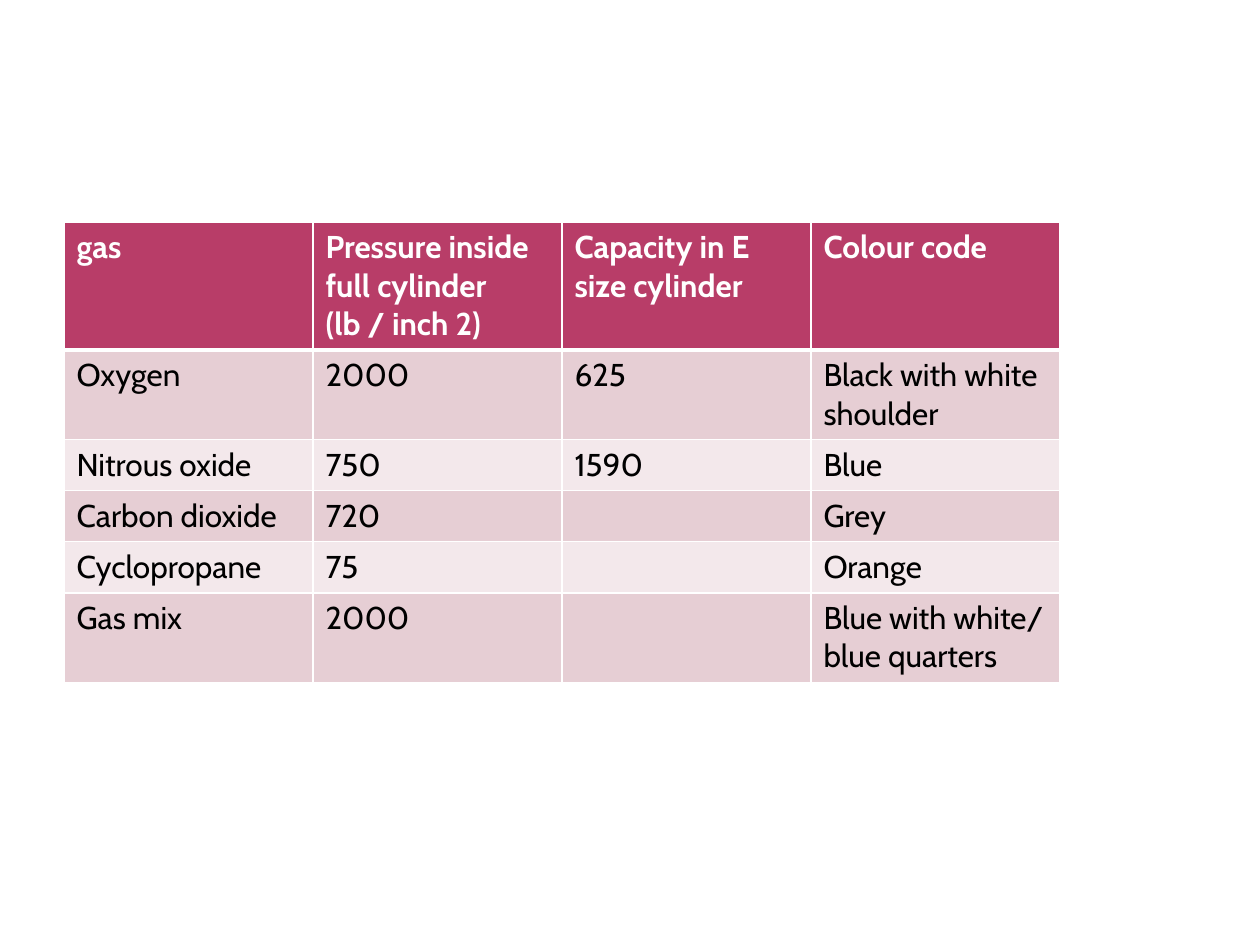
from lxml import etree
from pptx import Presentation
from pptx.dml.color import RGBColor as RGB
from pptx.oxml import parse_xml
from pptx.oxml.ns import nsdecls
from pptx.util import Pt

PX = 914400 // 126
WHITE = RGB(0xFF, 0xFF, 0xFF)
BLACK = RGB(0x00, 0x00, 0x00)
HEADER = RGB(0xB8, 0x3D, 0x68)
BANDS = [RGB(0xF3, 0xE8, 0xEB), RGB(0xE6, 0xCE, 0xD4)]

ROWS = [
    ["gas", "Pressure inside full cylinder (lb / inch 2)",
     "Capacity in E size cylinder", "Colour code"],
    ["Oxygen", "2000", "625", "Black with white shoulder"],
    ["Nitrous oxide", "750", "1590", "Blue"],
    ["Carbon dioxide", "720", "", "Grey"],
    ["Cyclopropane", "75", "", "Orange"],
    ["Gas mix", "2000", "", "Blue with white/ blue quarters"],
]


def add_border(cell, side, width):
    line = parse_xml(
        f'<a:ln{side} {nsdecls("a")} w="{Pt(width)}"><a:solidFill>'
        f'<a:srgbClr val="{WHITE}"/></a:solidFill></a:ln{side}>')
    cell._tc.get_or_add_tcPr().append(line)


prs = Presentation()
prs.slide_width, prs.slide_height = 1260 * PX, 945 * PX
s = prs.slides.add_slide(prs.slide_layouts[6])

# Table grid: equal columns, rows grow with their text
frame = s.shapes.add_table(len(ROWS), len(ROWS[0]),
                           64 * PX, 222 * PX, 996 * PX, 532 * PX)
table = frame.table
for col in table.columns:
    col.width = 249 * PX
for row in table.rows:
    row.height = 51 * PX
frame.height = 532 * PX

# Cells: borders, banded fill, text
for i, texts in enumerate(ROWS):
    is_header = i == 0
    font_format = {"name": "Cabin", "size": Pt(18), "bold": is_header}
    widths = {"L": 1, "R": 1, "T": 3 if i == 1 else 1, "B": 3 if is_header else 1}
    for j, text in enumerate(texts):
        cell = table.cell(i, j)
        for side, width in widths.items():
            add_border(cell, side, width)
        cell.fill.solid()
        cell.fill.fore_color.rgb = HEADER if is_header else BANDS[i % 2]
        if not text:
            continue
        r = cell.text_frame.paragraphs[0].add_run()
        r.text = text
        for key, value in font_format.items():
            setattr(r.font, key, value)
        r.font.color.rgb = WHITE if is_header else BLACK

prs.save("out.pptx")
